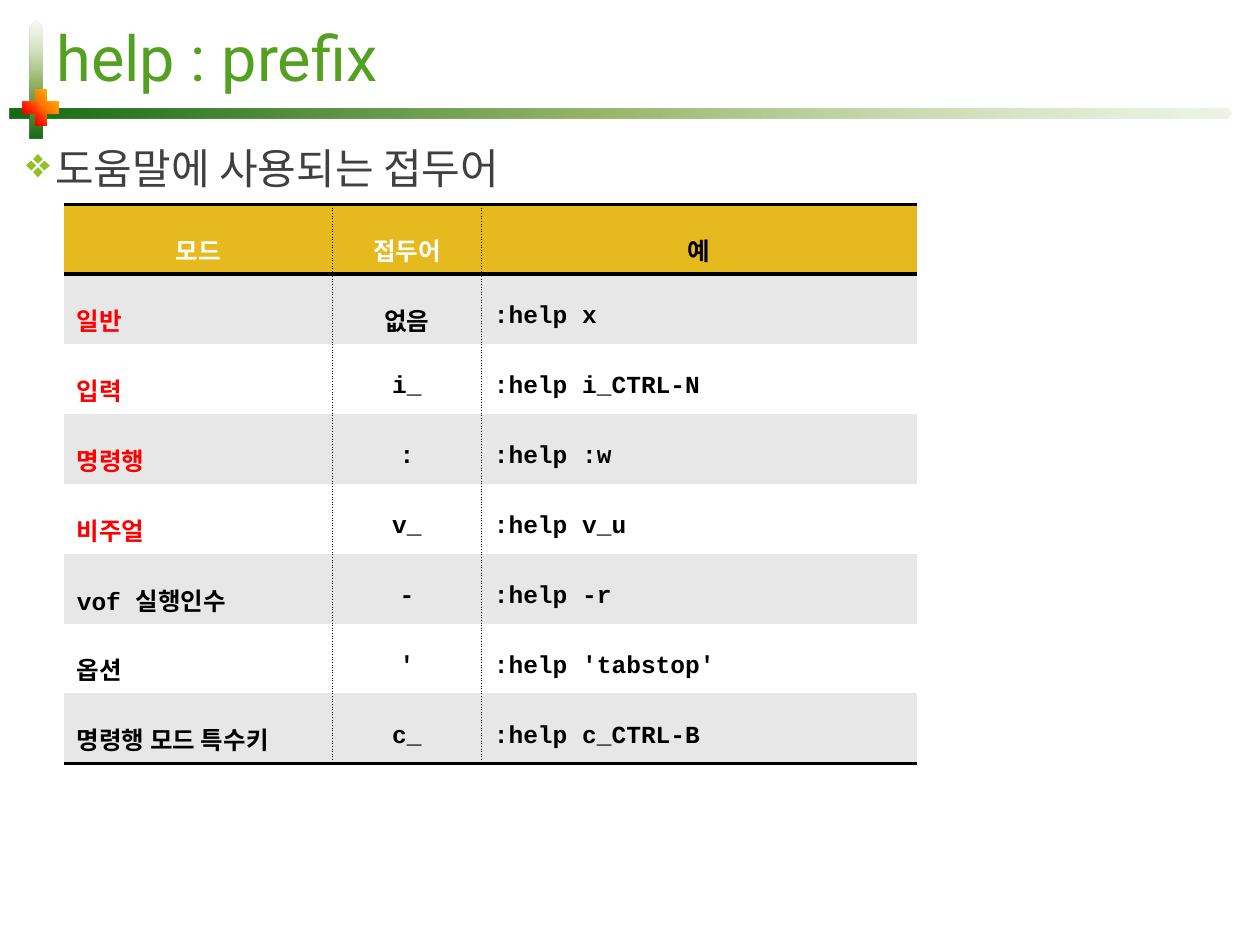
import dataclasses

import lxml.etree
import pptx
import pptx.dml.color
import pptx.enum.shapes
import pptx.enum.text
import pptx.oxml.ns
import pptx.util

SLIDE_WIDTH = pptx.util.Inches(10)
SLIDE_HEIGHT = pptx.util.Inches(7.5)
GRID_UNIT = SLIDE_WIDTH / 100
NO_STYLE = "{2D5ABB26-0587-4C30-8999-92F81FD0307C}"


@dataclasses.dataclass(frozen=True)
class Theme:
    """Colours, fonts and type sizes of the slide."""
    title: str = "54A021"
    body: str = "404040"
    bullet: str = "90C226"
    header: str = "E6B91E"
    white: str = "FFFFFF"
    band: str = "E7E7E7"
    ink: str = "000000"
    accent: str = "FF0000"
    bar: tuple = ((0, "DDEBCF"), (50, "9CB86E"), (100, "156B13"))
    plus: tuple = ((0, "FFF200"), (45, "FF7A00"), (70, "FF0300"), (100, "4D0808"))
    font: str = "Roboto"
    code_font: str = "Courier New"
    title_size: int = 36
    body_size: int = 24
    table_size: int = 14


THEME = Theme()
HEADERS = ("모드", "접두어", "예")
MODES = (
    ("일반", "없음", ":help x"),
    ("입력", "i_", ":help i_CTRL-N"),
    ("명령행", ":", ":help :w"),
    ("비주얼", "v_", ":help v_u"),
    ("vof 실행인수", "-", ":help -r"),
    ("옵션", "'", ":help 'tabstop'"),
    ("명령행 모드 특수키", "c_", ":help c_CTRL-B"),
)
ACCENTED_ROWS = 4
COLUMN_WIDTHS = (21.3, 11.8, 34.6)
ROW_HEIGHT = 5.55


def grid(*units):
    """Turn grid units into slide lengths."""
    return [pptx.util.Emu(round(unit * GRID_UNIT)) for unit in units]


def add_element(parent, tag, **attributes):
    """Append a DrawingML element."""
    return lxml.etree.SubElement(parent, pptx.oxml.ns.qn(tag), attributes)


def format_text(paragraph, size, color, font, bold=False):
    """Format every run of a paragraph."""
    for run in paragraph.runs:
        run.font.size = pptx.util.Pt(size)
        run.font.name = font
        run.font.bold = bold
        run.font.color.rgb = pptx.dml.color.RGBColor.from_string(color)


def add_gradient_shape(slide, kind, box, stops, angle, opacity=100, rotation=0):
    """Add an unlined shape whose first gradient stop may be translucent."""
    shape = slide.shapes.add_shape(kind, *grid(*box))
    shape.rotation = rotation
    shape.shadow.inherit = False
    shape.line.fill.background()
    shape.fill.gradient()
    gradient = shape.fill._xPr.find(pptx.oxml.ns.qn("a:gradFill"))
    for child in list(gradient):
        gradient.remove(child)
    stop_list = add_element(gradient, "a:gsLst")
    for position, color in stops:
        stop = add_element(stop_list, "a:gs", pos=str(position * 1000))
        fill = add_element(stop, "a:srgbClr", val=color)
        if position == 0 and opacity < 100:
            add_element(fill, "a:alpha", val=str(opacity * 1000))
    add_element(gradient, "a:lin", ang=str(angle * 60000), scaled="0")


def add_text(slide, box, text, size, color, anchor):
    """Add a wrapped text box and return its paragraph."""
    text_frame = slide.shapes.add_textbox(*grid(*box)).text_frame
    text_frame.word_wrap = True
    text_frame.vertical_anchor = anchor
    text_frame.text = text
    paragraph = text_frame.paragraphs[0]
    format_text(paragraph, size, color, THEME.font)
    return paragraph


def add_bullet(paragraph, character, indent):
    """Give a paragraph a coloured bullet and a hanging indent."""
    paragraph.space_before = pptx.util.Pt(10)
    properties = paragraph._p.get_or_add_pPr()
    length = grid(indent)[0]
    properties.set("marL", str(length))
    properties.set("indent", str(-length))
    color = add_element(properties, "a:buClr")
    add_element(color, "a:srgbClr", val=THEME.bullet)
    add_element(properties, "a:buSzPct", val="100000")
    add_element(properties, "a:buChar", char=character)


def add_border(cell, side, width, dash):
    """Draw one border of a cell."""
    line = add_element(cell._tc.get_or_add_tcPr(), "a:ln" + side,
                       w=str(pptx.util.Pt(width)))
    fill = add_element(line, "a:solidFill")
    add_element(fill, "a:srgbClr", val=THEME.ink)
    add_element(line, "a:prstDash", val=dash)


def fill_cell(cell, text, row, column):
    """Write and style a cell according to its place in the table."""
    is_header = row == 0
    borders = (
        ("L", column > 0, 1, "sysDot"),
        ("R", column < len(HEADERS) - 1, 1, "sysDot"),
        ("T", is_header, 2, "solid"),
        ("B", row in (0, len(MODES)), 2, "solid"),
    )
    for side, drawn, width, dash in borders:
        if drawn:
            add_border(cell, side, width, dash)
    background = THEME.header if is_header else (THEME.white, THEME.band)[row % 2]
    cell.fill.solid()
    cell.fill.fore_color.rgb = pptx.dml.color.RGBColor.from_string(background)
    cell.vertical_anchor = pptx.enum.text.MSO_ANCHOR.MIDDLE
    cell.text_frame.text = text
    paragraph = cell.text_frame.paragraphs[0]
    paragraph.line_spacing = 1.6
    if is_header or column == 1:
        paragraph.alignment = pptx.enum.text.PP_ALIGN.CENTER
    color = THEME.ink
    if is_header and column < 2:
        color = THEME.white
    elif column == 0 and 1 <= row <= ACCENTED_ROWS:
        color = THEME.accent
    font = THEME.font if row == column == 0 else THEME.code_font
    format_text(paragraph, THEME.table_size, color, font, bold=True)


def add_prefix_table(slide, left, top):
    """Add the table of help prefixes."""
    contents = (HEADERS, *MODES)
    box = grid(left, top, sum(COLUMN_WIDTHS), ROW_HEIGHT * len(contents))
    table = slide.shapes.add_table(len(contents), len(HEADERS), *box).table
    table.first_row = table.horz_banding = False
    table._tbl.tblPr.find(pptx.oxml.ns.qn("a:tableStyleId")).text = NO_STYLE
    for column, width in zip(table.columns, grid(*COLUMN_WIDTHS)):
        column.width = width
    for row, texts in enumerate(contents):
        table.rows[row].height = grid(ROW_HEIGHT)[0]
        for column, text in enumerate(texts):
            fill_cell(table.cell(row, column), text, row, column)


def main():
    """Build and save the slide."""
    presentation = pptx.Presentation()
    presentation.slide_width = SLIDE_WIDTH
    presentation.slide_height = SLIDE_HEIGHT
    slide = presentation.slides.add_slide(presentation.slide_layouts[6])
    shapes = pptx.enum.shapes.MSO_SHAPE
    anchors = pptx.enum.text.MSO_ANCHOR
    add_gradient_shape(slide, shapes.PENTAGON, (0.8, 8.6, 96.9, 0.8), THEME.bar, 180, 50)
    add_gradient_shape(slide, shapes.PENTAGON, (-1.8, 5.8, 9.3, 1), THEME.bar, 180, 30, 270)
    add_gradient_shape(slide, shapes.MATH_PLUS, (1.3, 6.6, 3.9, 3.9), THEME.plus, 135)
    add_text(slide, (3.5, 0.7, 94.1, 7.6), "help : prefix",
             THEME.title_size, THEME.title, anchors.MIDDLE)
    heading = add_text(slide, (1.1, 10.8, 96.6, 48), "도움말에 사용되는 접두어",
                       THEME.body_size, THEME.body, anchors.TOP)
    add_bullet(heading, "❖", 2.3)
    add_prefix_table(slide, 5.1, 16.2)
    presentation.save("out.pptx")


if __name__ == "__main__":
    main()
